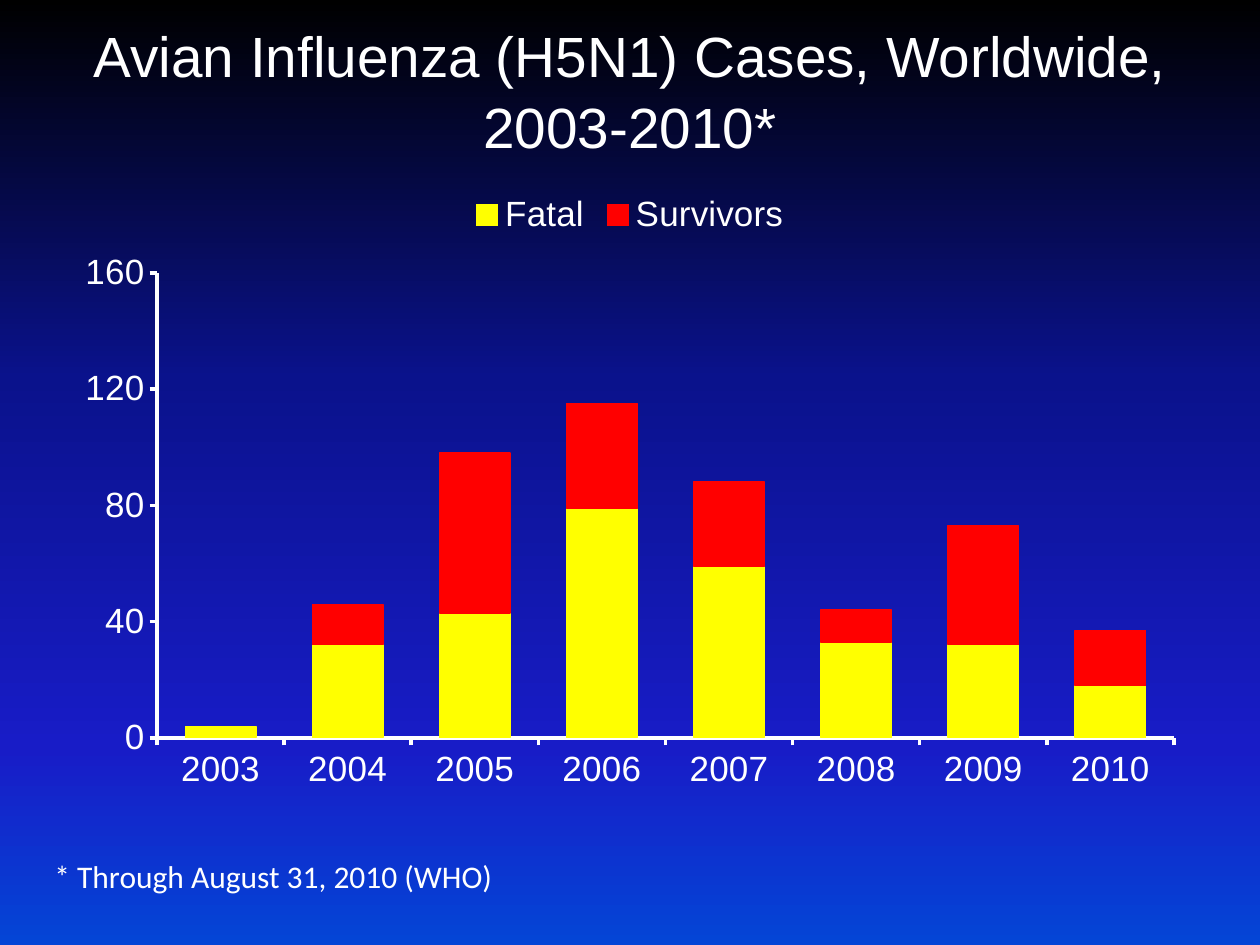
from copy import deepcopy

from lxml import etree
from pptx import Presentation
from pptx import util as u
from pptx.chart.data import CategoryChartData
from pptx.dml.color import RGBColor
from pptx.enum import chart as ch
from pptx.enum import text
from pptx.oxml.ns import qn

PX = u.Inches(1) / 126
WHITE = "FFFFFF"
STOPS = [(0, "000000"), (40, "0A128C"), (79, "181CC7"), (100, "0445D6")]
YEARS = [str(year) for year in range(2003, 2011)]
SERIES = [
    ("Fatal", "FFFF00", [4, 32, 43, 79, 59, 33, 32, 18]),
    ("Survivors", "FF0000", [0, 14, 55, 36, 29, 11, 41, 19]),
]


def px(n):
    return u.Emu(round(n * PX))


def rgb(value):
    return RGBColor.from_string(value)


def style(font, size, name="Arial"):
    font.size = u.Pt(size)
    font.name = name
    font.color.rgb = rgb(WHITE)


def add_background(s):
    fill = s.background.fill
    fill.gradient()
    fill.gradient_angle = 270  # counter-clockwise: top to bottom
    stops = s.background._cSld.find(".//" + qn("a:gsLst"))
    while len(stops) < len(STOPS):
        stops.append(deepcopy(stops[0]))
    for stop, (position, color) in zip(fill.gradient_stops, STOPS):
        stop.position = position / 100
        stop.color.rgb = rgb(color)


def add_text(s, box, words, size, name="Arial", title=False):
    tf = s.shapes.add_textbox(*map(px, box)).text_frame
    tf.text = words
    tf.word_wrap = title
    p = tf.paragraphs[0]
    if title:
        tf.vertical_anchor = text.MSO_ANCHOR.MIDDLE
        p.alignment = text.PP_ALIGN.CENTER
        p.line_spacing = 1.04
    style(p.runs[0].font, size, name)


def style_axis(axis):
    axis.major_tick_mark = ch.XL_TICK_MARK.OUTSIDE
    axis.minor_tick_mark = ch.XL_TICK_MARK.NONE
    axis.has_major_gridlines = False
    axis.format.line.color.rgb = rgb(WHITE)
    axis.format.line.width = u.Pt(2)
    style(axis.tick_labels.font, 20)


def place_plot(chart, box, plot_box):
    """Fix the inner plot area, given relative to the chart box."""
    area = chart._chartSpace.find(".//" + qn("c:plotArea"))
    layout = area.find(qn("c:layout"))
    if layout is None:
        layout = etree.Element(qn("c:layout"))
        area.insert(0, layout)
    manual = etree.SubElement(layout, qn("c:manualLayout"))
    x, y, w, h = plot_box
    values = [("layoutTarget", "inner"), ("xMode", "edge"), ("yMode", "edge"),
              ("x", x / box[2]), ("y", y / box[3]),
              ("w", w / box[2]), ("h", h / box[3])]
    for tag, value in values:
        etree.SubElement(manual, qn("c:" + tag)).set("val", str(value))


def add_cases_chart(s, box):
    data = CategoryChartData()
    data.categories = YEARS
    for name, _, values in SERIES:
        data.add_series(name, values)
    chart = s.shapes.add_chart(
        ch.XL_CHART_TYPE.COLUMN_STACKED, *map(px, box), data).chart
    chart.has_title = False
    style(chart.font, 18, "Calibri")

    # Legend
    chart.has_legend = True
    chart.legend.position = ch.XL_LEGEND_POSITION.TOP
    chart.legend.include_in_layout = False
    style(chart.legend.font, 20)

    # Axes
    for axis in (chart.category_axis, chart.value_axis):
        style_axis(axis)
    chart.value_axis.minimum_scale = 0
    chart.value_axis.maximum_scale = 160
    chart.value_axis.major_unit = 40

    # Columns
    plot = chart.plots[0]
    plot.gap_width = 80
    plot.overlap = 100
    plot.vary_by_categories = False
    for series, (_, color, _) in zip(plot.series, SERIES):
        series.format.fill.solid()
        series.format.fill.fore_color.rgb = rgb(color)
        series.format.line.color.rgb = rgb(color)
        series.format.line.width = u.Pt(0.75)
    place_plot(chart, box, (94, 94, 1017, 465))


def main():
    prs = Presentation()
    prs.slide_width, prs.slide_height = px(1260), px(945)
    s = prs.slides.add_slide(prs.slide_layouts[6])
    add_background(s)
    add_text(s, (63, 10, 1134, 158),
             "Avian Influenza (H5N1) Cases, Worldwide, 2003-2010*",
             32.4, title=True)
    add_cases_chart(s, (63, 179, 1134, 624))
    add_text(s, (42, 851, 469, 50), "* Through August 31, 2010 (WHO)",
             18, "Calibri")
    prs.save("out.pptx")


if __name__ == "__main__":
    main()
